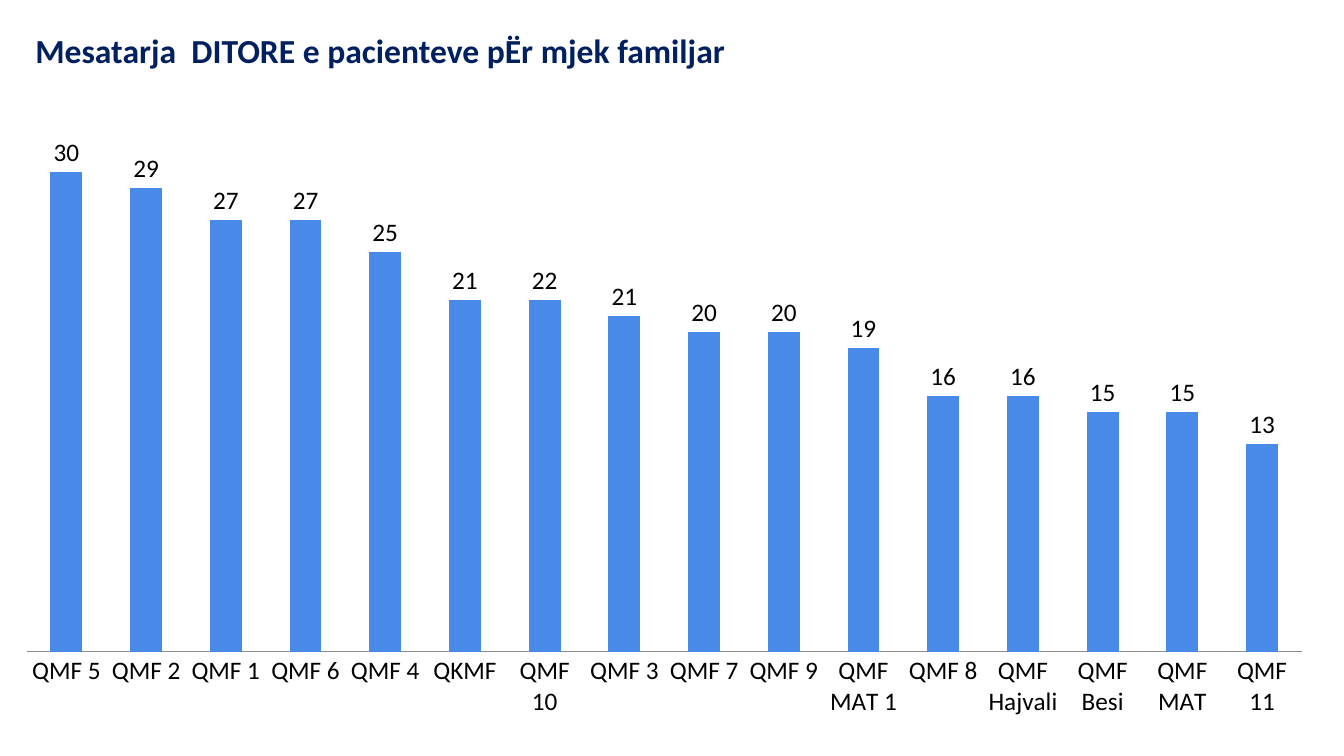
from dataclasses import dataclass

from lxml.etree import SubElement
from pptx import Presentation
from pptx.chart.data import CategoryChartData
from pptx.dml.color import RGBColor
from pptx.enum.chart import XL_CHART_TYPE as ChartType
from pptx.enum.chart import XL_LABEL_POSITION as LabelPosition
from pptx.enum.chart import XL_TICK_LABEL_POSITION as TickLabels
from pptx.enum.chart import XL_TICK_MARK as TickMark
from pptx.enum.text import MSO_ANCHOR as Anchor
from pptx.oxml.ns import qn
from pptx.util import Cm, Pt


@dataclass(frozen=True)
class Theme:
    font: str = "Calibri"
    heading: RGBColor = RGBColor.from_string("002060")
    ink: RGBColor = RGBColor.from_string("000000")
    bar: RGBColor = RGBColor.from_string("4989E7")
    baseline: RGBColor = RGBColor.from_string("898989")
    heading_size: Pt = Pt(24)
    chart_size: Pt = Pt(18)


DAILY_PATIENTS = {
    "QMF 5": 30, "QMF 2": 29, "QMF 1": 27, "QMF 6": 27,
    "QMF 4": 25, "QKMF": 22, "QMF 10": 22, "QMF 3": 21,
    "QMF 7": 20, "QMF 9": 20, "QMF MAT 1": 19, "QMF 8": 16,
    "QMF Hajvali": 16, "QMF Besi": 15, "QMF MAT": 15, "QMF 11": 13,
}
LABEL_OVERRIDES = {"QKMF": "21"}
PLOT_AREA = {"x": 0.02, "y": 0.02, "w": 0.96, "h": 0.86}


def apply(target, values):
    for name, value in values.items():
        setattr(target, name, value)


class SlideBuilder:
    def __init__(self, slide, theme):
        self.slide = slide
        self.theme = theme

    def style_font(self, font, size, color, bold=False):
        apply(font, {"name": self.theme.font, "size": size, "bold": bold})
        font.color.rgb = color

    def heading(self, wording, left, top, width, height):
        frame = self.slide.shapes.add_textbox(
            Cm(left), Cm(top), Cm(width), Cm(height)).text_frame
        apply(frame, {"word_wrap": True, "vertical_anchor": Anchor.TOP})
        line = frame.paragraphs[0]
        line.line_spacing = 0.9
        run = line.add_run()
        run.text = wording
        self.style_font(run.font, self.theme.heading_size, self.theme.heading, True)

    def column_chart(self, values, overrides, left, top, width, height):
        data = CategoryChartData()
        data.categories = list(values)
        data.add_series("Series 1", list(values.values()))
        chart = self.slide.shapes.add_chart(
            ChartType.COLUMN_CLUSTERED,
            Cm(left), Cm(top), Cm(width), Cm(height), data).chart
        apply(chart, {"has_legend": False, "has_title": False})
        self.style_font(chart.font, self.theme.chart_size, self.theme.ink)
        self.style_axes(chart)
        self.style_columns(chart.plots[0], list(values), overrides)
        self.place_plot(chart)

    def style_axes(self, chart):
        apply(chart.value_axis, {
            "visible": False, "has_major_gridlines": False,
            "minimum_scale": 0, "maximum_scale": 35})
        centres = chart.category_axis
        apply(centres, {
            "major_tick_mark": TickMark.NONE, "minor_tick_mark": TickMark.NONE,
            "tick_label_position": TickLabels.NEXT_TO_AXIS})
        centres.format.line.color.rgb = self.theme.baseline
        centres.format.line.width = Pt(0.75)

    def style_columns(self, plot, centres, overrides):
        apply(plot, {"gap_width": 150, "overlap": -25,
                     "vary_by_categories": False, "has_data_labels": True})
        apply(plot.data_labels, {
            "show_value": True, "position": LabelPosition.OUTSIDE_END})
        self.style_font(plot.data_labels.font, self.theme.chart_size, self.theme.ink)
        columns = plot.series[0]
        columns.format.fill.solid()
        columns.format.fill.fore_color.rgb = self.theme.bar
        labels = columns.data_labels
        apply(labels, {"show_value": True, "position": LabelPosition.OUTSIDE_END})
        self.style_font(labels.font, self.theme.chart_size, self.theme.ink)
        for centre, wording in overrides.items():
            label = columns.points[centres.index(centre)].data_label
            run = label.text_frame.paragraphs[0].add_run()
            run.text = wording
            self.style_font(run.font, self.theme.chart_size, self.theme.ink)
            label.position = LabelPosition.OUTSIDE_END

    def place_plot(self, chart):
        area = chart.element.find(f".//{qn('c:plotArea')}")
        layout = area.find(qn("c:layout"))
        if layout is None:
            layout = SubElement(area, qn("c:layout"))
            area.insert(0, layout)
        manual = SubElement(layout, qn("c:manualLayout"))
        settings = {"layoutTarget": "inner", "xMode": "edge", "yMode": "edge",
                    **PLOT_AREA}
        for tag, value in settings.items():
            SubElement(manual, qn(f"c:{tag}")).set("val", str(value))


def main():
    deck = Presentation()
    apply(deck, {"slide_width": Cm(33.87), "slide_height": Cm(19.05)})
    builder = SlideBuilder(deck.slides.add_slide(deck.slide_layouts[6]), Theme())
    builder.column_chart(DAILY_PATIENTS, LABEL_OVERRIDES, 0, 1.98, 33.48, 16.41)
    builder.heading("Mesatarja  DITORE e pacienteve pËr mjek familjar",
                    0.64, 0.74, 24.13, 2.11)
    deck.save("out.pptx")


if __name__ == "__main__":
    main()
